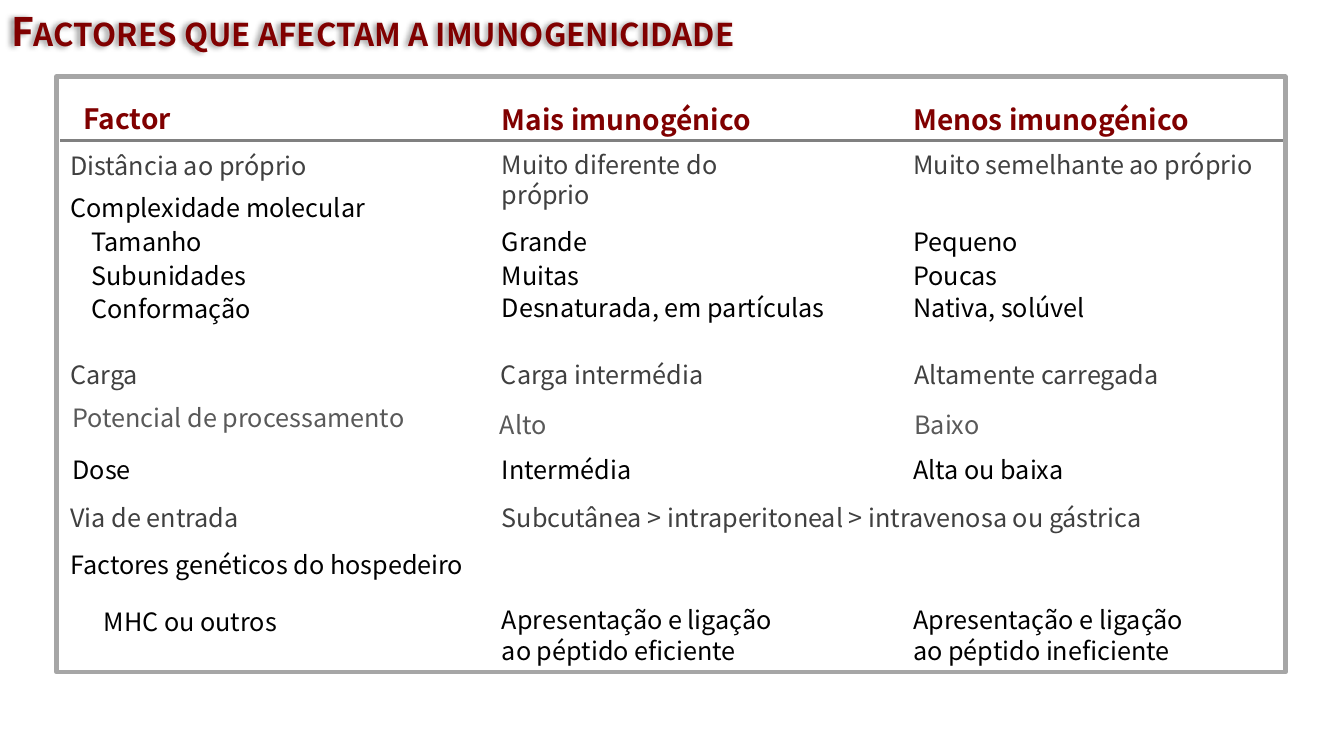
from lxml.etree import SubElement
from pptx import Presentation
from pptx.dml.color import RGBColor
from pptx.enum.shapes import MSO_CONNECTOR, MSO_SHAPE
from pptx.enum.text import MSO_ANCHOR, MSO_AUTO_SIZE, PP_ALIGN
from pptx.oxml.ns import qn
from pptx.util import Pt

PX = 9144
FONT = "Noto Sans CJK SC"
MAROON = RGBColor(0x80, 0x00, 0x00)
BLACK = RGBColor(0x00, 0x00, 0x00)
DARK = RGBColor(0x40, 0x40, 0x40)
MEDIUM = RGBColor(0x59, 0x59, 0x59)
RULE_GREY = RGBColor(0x80, 0x80, 0x80)
FRAME_GREY = RGBColor(0xA6, 0xA6, 0xA6)

FACTOR, INDENT, MORE, LESS = 60, 81, 488, 896
LINE, TWO_LINES = 40, 71

HEADINGS = [
    ("Factor", 73, 96, 107),
    ("Mais imunogénico", MORE, 97, 281),
    ("Menos imunogénico", LESS, 97, 309),
]

SINGLE_LINES = [
    ("Distância ao próprio", FACTOR, 144, 266, DARK),
    ("Complexidade molecular", FACTOR, 186, 321, BLACK),
    ("Tamanho", INDENT, 220, 131, BLACK),
    ("Grande", MORE, 220, 109, BLACK),
    ("Pequeno", LESS, 220, 127, BLACK),
    ("Subunidades", INDENT, 253, 177, BLACK),
    ("Muitas", MORE, 253, 102, BLACK),
    ("Poucas", LESS, 253, 105, BLACK),
    ("Conformação", INDENT, 286, 184, BLACK),
    ("Carga", FACTOR, 352, 90, DARK),
    ("Alto", 486, 401, 70, MEDIUM),
    ("Baixo", 897, 401, 85, MEDIUM),
    ("Dose", 62, 446, 82, BLACK),
    ("Intermédia", MORE, 446, 151, BLACK),
    ("Alta ou baixa", LESS, 446, 178, BLACK),
    ("Via de entrada", FACTOR, 493, 197, DARK),
    ("Subcutânea > intraperitoneal > intravenosa ou gástrica", MORE, 493, 690, DARK),
    ("MHC ou outros", 93, 597, 206, BLACK),
]

WRAPPED = [
    ("Muito diferente do próprio", MORE, 143, 322, TWO_LINES, DARK),
    ("Muito semelhante ao próprio", LESS, 143, 390, LINE, DARK),
    ("Desnaturada, em partículas", MORE, 285, 387, LINE, BLACK),
    ("Nativa, solúvel", LESS, 285, 283, LINE, BLACK),
    ("Carga intermédia", 487, 352, 325, LINE, DARK),
    ("Altamente carregada", 897, 352, 283, LINE, DARK),
    ("Potencial de processamento", 62, 394, 412, LINE, MEDIUM),
    ("Factores genéticos do hospedeiro", FACTOR, 540, 430, LINE, BLACK),
    ("Apresentação e ligação ao péptido eficiente", MORE, 595, 300, TWO_LINES, BLACK),
    ("Apresentação e ligação ao péptido ineficiente", LESS, 595, 300, TWO_LINES, BLACK),
]


def write_text(shape, text, size=18, colour=BLACK, bold=False, wrap=True, align=PP_ALIGN.LEFT):
    frame = shape.text_frame
    frame.word_wrap = wrap
    frame.auto_size = MSO_AUTO_SIZE.SHAPE_TO_FIT_TEXT
    frame.vertical_anchor = MSO_ANCHOR.TOP
    para = frame.paragraphs[0]
    para.alignment = align
    span = para.add_run()
    span.text = text
    span.font.name = FONT
    span.font.size = Pt(size)
    span.font.bold = bold
    span.font.color.rgb = colour
    return span


def add_text(page, text, left, top, width, height=LINE, **text_format):
    box = page.shapes.add_textbox(left * PX, top * PX, width * PX, height * PX)
    write_text(box, text, **text_format)


def add_text_shadow(shape):
    effects = SubElement(shape.element.spPr, qn("a:effectLst"))
    shadow = SubElement(effects, qn("a:outerShdw"), blurRad="50800", dist="38100",
                        dir="10800000", algn="r", rotWithShape="0")
    colour = SubElement(shadow, qn("a:srgbClr"), val="000000")
    SubElement(colour, qn("a:alpha"), val="40000")


def format_title(page, text):
    title = page.shapes.title
    title.left, title.top, title.width, title.height = 1 * PX, 2 * PX, 925 * PX, 57 * PX
    span = write_text(title, text, size=28, colour=MAROON, bold=True, align=PP_ALIGN.JUSTIFY)
    span.font._element.set("cap", "small")
    add_text_shadow(title)


def add_rule(page, left, right, top):
    rule = page.shapes.add_connector(MSO_CONNECTOR.STRAIGHT, left * PX, top * PX, right * PX, top * PX)
    rule.line.color.rgb = RULE_GREY
    rule.line.width = Pt(2.25)
    SubElement(rule._element.spPr, qn("a:effectLst"))


def add_frame(page, left, top, width, height):
    border = page.shapes.add_shape(MSO_SHAPE.RECTANGLE, left * PX, top * PX, width * PX, height * PX)
    border.shadow.inherit = False
    border.fill.background()
    border.line.color.rgb = FRAME_GREY
    border.line.width = Pt(3)


def main():
    deck = Presentation()
    deck.slide_width, deck.slide_height = 1333 * PX, 750 * PX
    page = deck.slides.add_slide(deck.slide_layouts[5])
    format_title(page, "Factores que afectam a imunogenicidade")
    for text, left, top, width in HEADINGS:
        add_text(page, text, left, top, width, 44, size=20, colour=MAROON, bold=True, wrap=False)
    for text, left, top, width, colour in SINGLE_LINES:
        add_text(page, text, left, top, width, colour=colour, wrap=False)
    for text, left, top, width, height, colour in WRAPPED:
        add_text(page, text, left, top, width, height, colour=colour)
    add_rule(page, 60, 1273, 139)
    add_frame(page, 56, 76, 1219, 591)
    deck.save("out.pptx")


if __name__ == "__main__":
    main()
